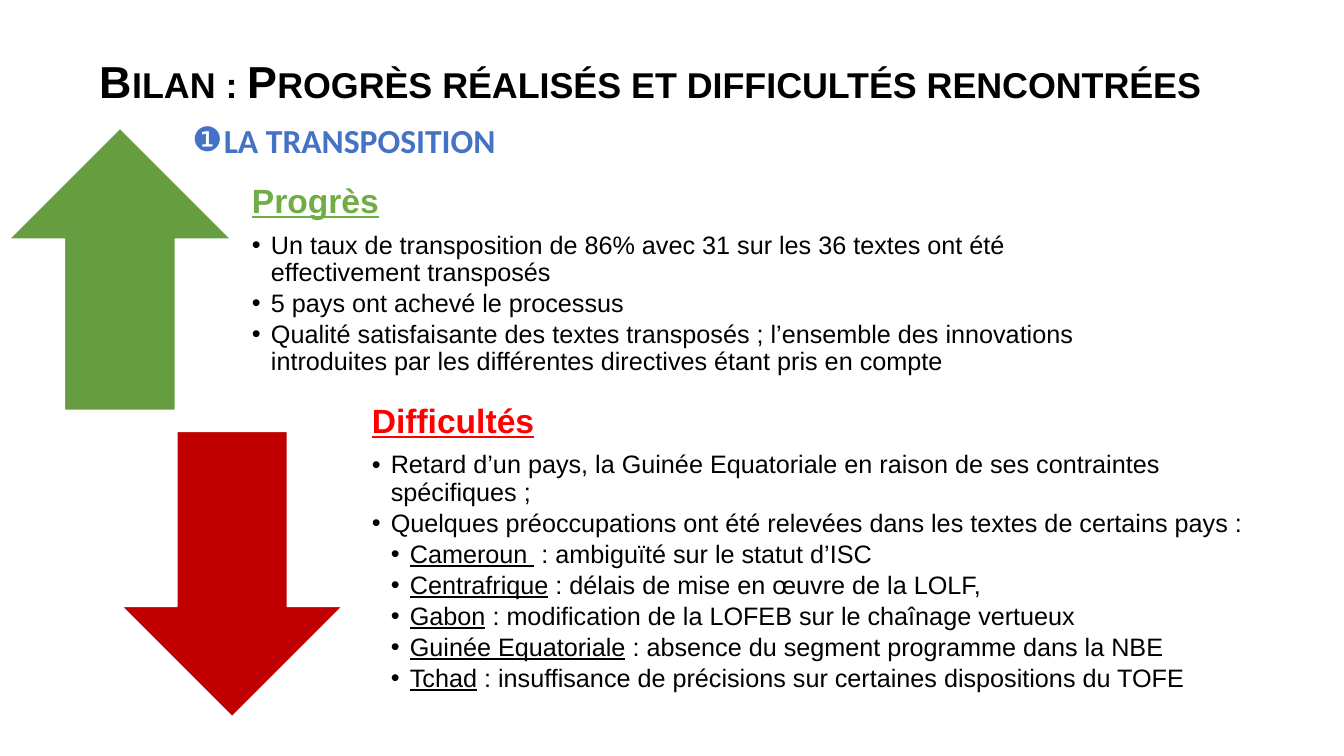
"""Build the slide on progress and difficulties of the transposition."""
from dataclasses import dataclass

from lxml import etree
from pptx import Presentation
from pptx import util as u
from pptx.dml import color
from pptx.enum import shapes, text
from pptx.oxml import ns

BLACK = "000000"
STEP = 0.48
Box = tuple[float, float, float, float]


@dataclass
class Line:
    body: str
    lead: str = ""
    level: int = 1


@dataclass
class Part:
    kind: shapes.MSO_SHAPE
    fill: str
    arrow: Box
    head: str
    tint: str
    box: Box
    lines: list[Line]


PARTS = [
    Part(shapes.MSO_SHAPE.UP_ARROW, "669D40", (0.23, 3.23, 5.59, 7.11),
         "Progrès", "70AD47", (5.87, 3.76, 23.5, 7.09), [
             Line("Un taux de transposition de 86% avec 31 sur les 36 textes ont été effectivement transposés"),
             Line("5 pays ont achevé le processus"),
             Line("Qualité satisfaisante des textes transposés ; l’ensemble des innovations "
                  "introduites par les différentes directives étant pris en compte"),
         ]),
    Part(shapes.MSO_SHAPE.DOWN_ARROW, "C00000", (3.07, 10.87, 5.56, 7.19),
         "Difficultés", "FF0000", (8.89, 10.46, 23.14, 7.2), [
             Line("Retard d’un pays, la Guinée Equatoriale en raison de ses contraintes spécifiques ;"),
             Line("Quelques préoccupations ont été relevées dans les textes de certains pays :"),
             Line(" : ambiguïté sur le statut d’ISC", "Cameroun ", 2),
             Line(" : délais de mise en œuvre de la LOLF,", "Centrafrique", 2),
             Line(" : modification de la LOFEB sur le chaînage vertueux", "Gabon", 2),
             Line(" : absence du segment programme dans la NBE", "Guinée Equatoriale", 2),
             Line(" : insuffisance de précisions sur certaines dispositions du TOFE", "Tchad", 2),
         ]),
]


def hue(code: str) -> color.RGBColor:
    """Turn a hex string into a colour."""
    return color.RGBColor.from_string(code)


def span(box: Box) -> list[u.Cm]:
    """Turn a box in centimetres into lengths."""
    return [u.Cm(side) for side in box]


def put(item, **form) -> None:
    """Set each format value on the item."""
    for key, value in form.items():
        setattr(item, key, value)


def write(para, words: str, size: int, tint: str = BLACK, face: str = "Arial", **form):
    """Add a formatted run to a paragraph."""
    run = para.add_run()
    run.text = words
    put(run.font, size=u.Pt(size), name=face, **form)
    run.font.color.rgb = hue(tint)
    return run


def mark(para, sign: str, left: float, hang: float) -> None:
    """Give a paragraph a bullet and a hanging indent."""
    props = para._p.get_or_add_pPr()
    props.set("marL", str(u.Cm(left)))
    props.set("indent", str(-u.Cm(hang)))
    etree.SubElement(props, ns.qn("a:buFont")).set("typeface", "Arial")
    etree.SubElement(props, ns.qn("a:buChar")).set("char", sign)


def draw(slide, part: Part) -> None:
    """Draw an arrow and the text beside it."""
    arrow = slide.shapes.add_shape(part.kind, *span(part.arrow))
    arrow.shadow.inherit = False
    arrow.fill.solid()
    arrow.fill.fore_color.rgb = hue(part.fill)
    arrow.line.color.rgb = hue("FFFFFF")
    arrow.line.width = u.Pt(1)

    frame = slide.shapes.add_textbox(*span(part.box)).text_frame
    edge = u.Cm(STEP)
    put(frame, word_wrap=True, vertical_anchor=text.MSO_ANCHOR.MIDDLE,
        margin_left=edge, margin_right=edge, margin_top=0, margin_bottom=edge)
    para = frame.paragraphs[0]
    put(para, line_spacing=0.9, space_after=u.Pt(8.4))
    write(para, part.head, 24, part.tint, bold=True, underline=True)
    for line in part.lines:
        para = frame.add_paragraph()
        put(para, level=line.level, line_spacing=0.9, space_after=u.Pt(2.7))
        mark(para, "•", STEP * line.level, STEP)
        if line.lead:
            write(para, line.lead, 18, underline=True)
        write(para, line.body, 18)


def main() -> None:
    """Build and save the slide."""
    deck = Presentation()
    put(deck, slide_width=u.Cm(33.87), slide_height=u.Cm(19.05))
    slide = deck.slides.add_slide(deck.slide_layouts.get_by_name("Title Only"))

    title = slide.shapes.title
    left, top, width, height = span((2.26, 0.28, 29.21, 3.68))
    put(title, left=left, top=top, width=width, height=height)
    put(title.text_frame, word_wrap=True, auto_size=text.MSO_AUTO_SIZE.NONE,
        vertical_anchor=text.MSO_ANCHOR.MIDDLE)
    para = title.text_frame.paragraphs[0]
    put(para, alignment=text.PP_ALIGN.LEFT, line_spacing=0.9)
    run = write(para, "Bilan : Progrès réalisés et difficultés rencontrées", 32, bold=True)
    run._r.get_or_add_rPr().set("cap", "small")

    for part in PARTS:
        draw(slide, part)

    frame = slide.shapes.add_textbox(*span((4.6, 2.9, 25.6, 1.27))).text_frame
    put(frame, word_wrap=True, auto_size=text.MSO_AUTO_SIZE.SHAPE_TO_FIT_TEXT)
    para = frame.paragraphs[0]
    mark(para, "❶", 0.79, 0.79)
    write(para, "LA TRANSPOSITION", 24, "4472C4", "Calibri", bold=True)
    deck.save("out.pptx")


if __name__ == "__main__":
    main()
